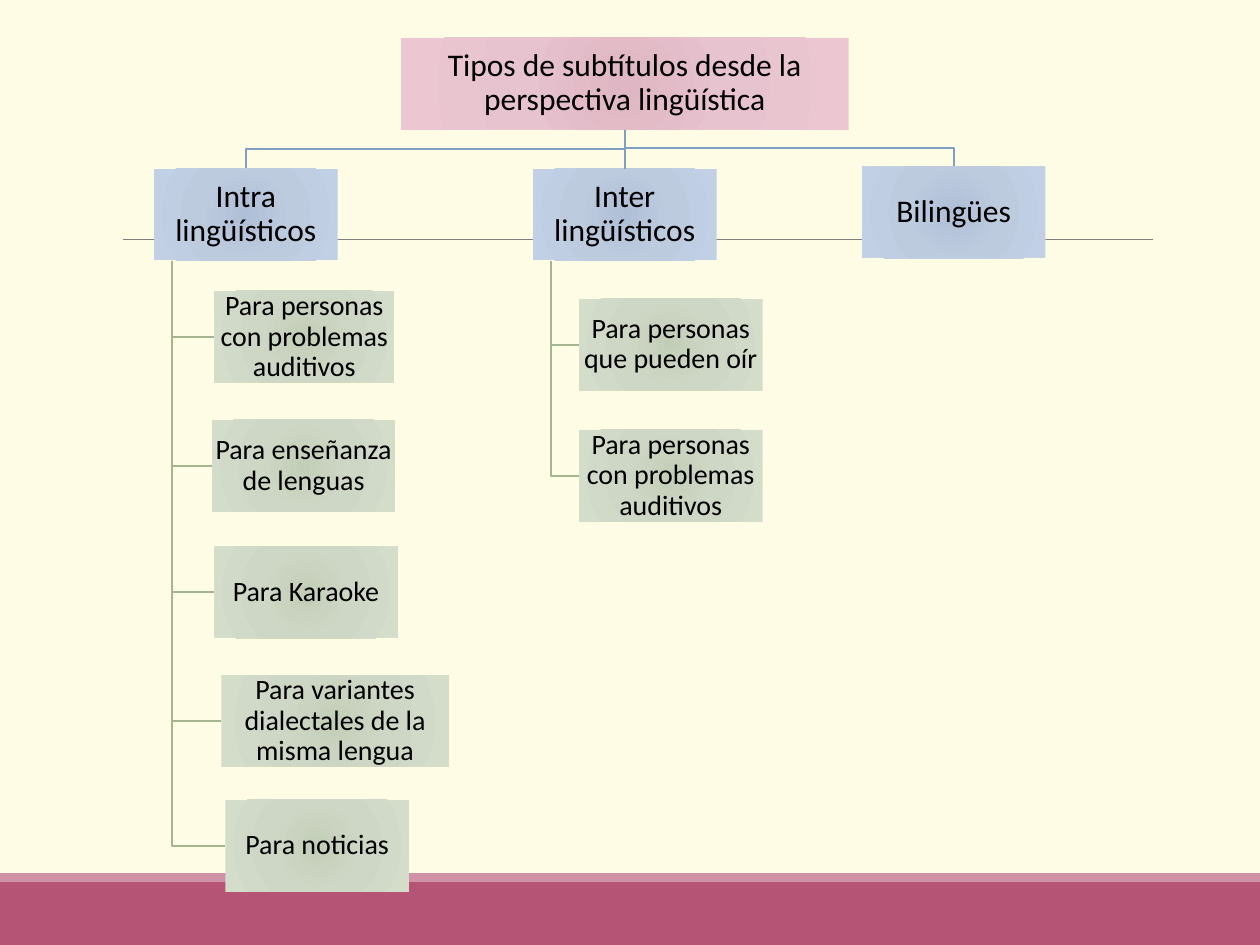
from lxml import etree
from pptx import Presentation
from pptx.dml.color import RGBColor
from pptx.enum import shapes, text
from pptx.oxml import parse_xml
from pptx.oxml.ns import nsdecls, qn
from pptx.util import Pt

PINK = ("DFB6C3", "E6C3CE", "ECC7D2")
BLUE = ("AFBFD7", "BDCBDF", "C1D0E5")
GREEN = ("C3CEB8", "CED7C5", "D4DDCA")
BLUE_LINE, GREEN_LINE = "809EC2", "A5B592"
BOX_W, BOX_H = 105, 52.5


def rgb(value):
    return RGBColor.from_string(value)


def style_box(box, wording, size, colors):
    """Radial gradient fill and centred text."""
    box.fill.gradient()
    stops = "".join(
        f'<a:gs pos="{pos}"><a:srgbClr val="{color}"/></a:gs>'
        for pos, color in zip((0, 45000, 100000), colors))
    old = box._element.spPr.find(qn("a:gradFill"))
    old.getparent().replace(old, parse_xml(
        f'<a:gradFill {nsdecls("a")} rotWithShape="1"><a:gsLst>{stops}</a:gsLst>'
        '<a:path path="circle"><a:fillToRect l="100000" t="100000" '
        'r="100000" b="100000"/></a:path></a:gradFill>'))
    box.line.fill.background()
    frame = box.text_frame
    frame.word_wrap = True
    frame.auto_size = text.MSO_AUTO_SIZE.NONE
    frame.vertical_anchor = text.MSO_ANCHOR.MIDDLE
    frame.margin_left = frame.margin_right = Pt(0.8)
    frame.margin_top = frame.margin_bottom = Pt(0.8)
    paragraph = frame.paragraphs[0]
    paragraph.alignment = text.PP_ALIGN.CENTER
    paragraph.line_spacing = 0.9
    run = paragraph.add_run()
    run.text = wording
    run.font.name = "Calibri"
    run.font.size = Pt(size)
    run.font.color.rgb = rgb("000000")


prs = Presentation()
prs.slide_width, prs.slide_height = Pt(720), Pt(540)
slide = prs.slides.add_slide(prs.slide_layouts[5])
slide.background.fill.solid()
slide.background.fill.fore_color.rgb = rgb("FFFCE6")

# Footer bands
for top, height, color in ((504, 36, "B55475"), (499, 5, "D092A7")):
    band = slide.shapes.add_shape(
        shapes.MSO_SHAPE.RECTANGLE, 0, Pt(top), Pt(720), Pt(height))
    band.shadow.inherit = False
    band.fill.solid()
    band.fill.fore_color.rgb = rgb(color)
    band.line.fill.background()

# Rule across the slide
rule = slide.shapes.add_connector(
    shapes.MSO_CONNECTOR.STRAIGHT, Pt(70.5), Pt(136.8), Pt(659), Pt(136.8))
rule.line.color.rgb = rgb("808080")
rule.line.width = Pt(0.5)
etree.SubElement(rule._element.spPr, qn("a:effectLst"))

# Title at the root of the tree
root = slide.shapes.title
root.left, root.top, root.width, root.height = Pt(229), Pt(21.6), Pt(256), Pt(BOX_H)
style_box(root, "Tipos de subtítulos desde la perspectiva lingüística", 18, PINK)
root_x, root_bottom = 357, 21.6 + BOX_H

# Branches: wording, left, top, leaves (wording, left, top, width)
branches = [
    ("Intra lingüísticos", 88, 96.4, [
        ("Para personas con problemas auditivos", 122.4, 166.3, 103),
        ("Para enseñanza de lenguas", 121, 240, BOX_W),
        ("Para Karaoke", 122.4, 312.2, BOX_W),
        ("Para variantes dialectales de la misma lengua", 126.5, 385.8, 130),
        ("Para noticias", 128.8, 457, BOX_W)]),
    ("Inter lingüísticos", 304.5, 96.4, [
        ("Para personas que pueden oír", 330.8, 170.8, BOX_W),
        ("Para personas con problemas auditivos", 330.8, 245.7, BOX_W)]),
    ("Bilingües", 492.5, 95, []),
]

# Bent lines, behind the boxes
bends = []
for wording, left, top, leaves in branches:
    center = left + BOX_W / 2
    middle = (root_bottom + top) / 2
    if center != root_x:
        bends.append((BLUE_LINE, [(root_x, root_bottom), (root_x, middle),
                                  (center, middle), (center, top)]))
    trunk = left + BOX_W / 10
    for _, leaf_left, leaf_top, _ in leaves:
        leaf_middle = leaf_top + BOX_H / 2
        bends.append((GREEN_LINE, [(trunk, top + BOX_H), (trunk, leaf_middle),
                                   (leaf_left, leaf_middle)]))
for color, points in bends:
    start, *rest = [(Pt(x), Pt(y)) for x, y in points]
    builder = slide.shapes.build_freeform(*start)
    builder.add_line_segments(rest, close=False)
    bend = builder.convert_to_shape()
    bend.shadow.inherit = False
    bend.fill.background()
    bend.line.color.rgb = rgb(color)
    bend.line.width = Pt(1.25)

# Boxes of the branches and their leaves
for wording, left, top, leaves in branches:
    boxes = [(wording, left, top, BOX_W, 18, BLUE)]
    boxes += [(*leaf, 16, GREEN) for leaf in leaves]
    for label, box_left, box_top, width, size, colors in boxes:
        box = slide.shapes.add_shape(
            shapes.MSO_SHAPE.RECTANGLE, Pt(box_left), Pt(box_top), Pt(width), Pt(BOX_H))
        box.shadow.inherit = False
        style_box(box, label, size, colors)
        # Straight line to the branch right below the root
        if colors is BLUE and left + BOX_W / 2 == root_x:
            stem = slide.shapes.add_connector(
                shapes.MSO_CONNECTOR.STRAIGHT,
                Pt(root_x), Pt(root_bottom), Pt(root_x), Pt(top))
            stem.begin_connect(root, 2)
            stem.end_connect(box, 0)
            stem.line.color.rgb = rgb(BLUE_LINE)
            stem.line.width = Pt(1.25)
            etree.SubElement(stem._element.spPr, qn("a:effectLst"))

prs.save("out.pptx")
